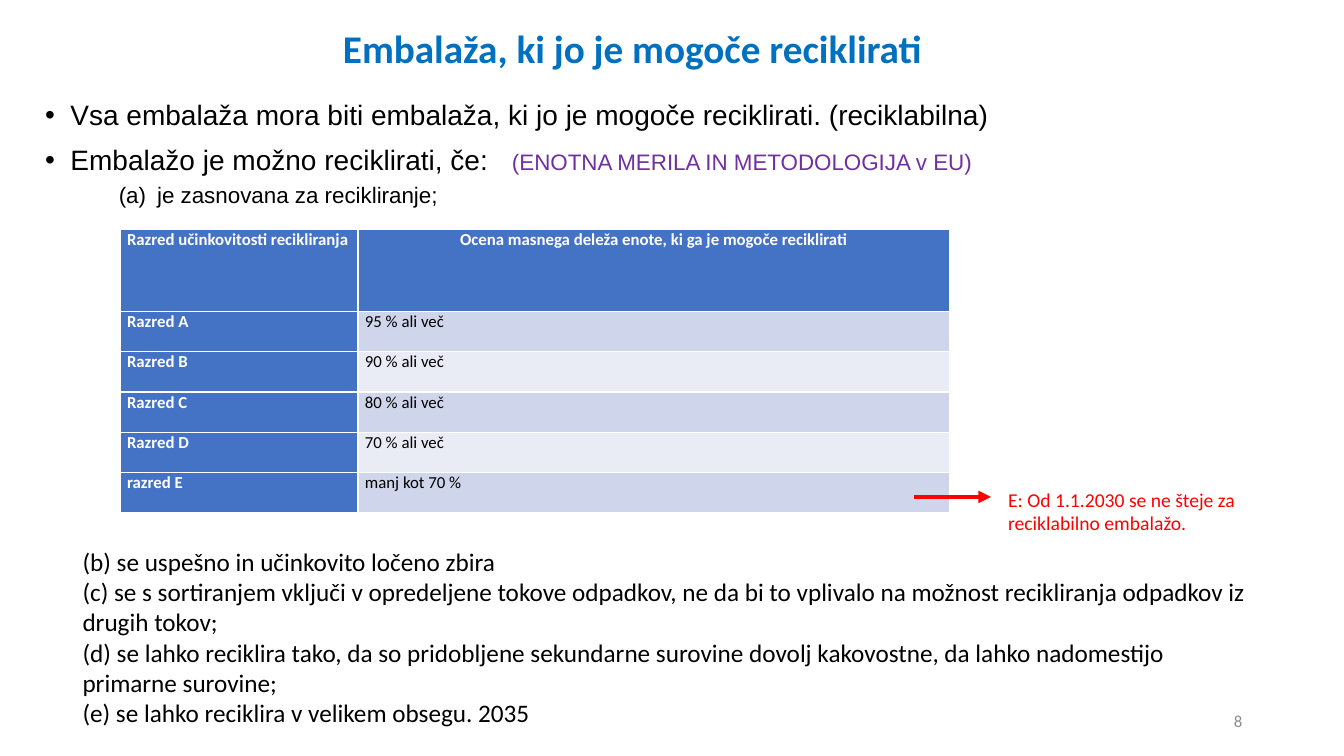
from dataclasses import dataclass

from lxml import etree
from pptx import Presentation
from pptx.dml.color import RGBColor
from pptx.enum.shapes import MSO_CONNECTOR
from pptx.enum.text import MSO_ANCHOR, PP_ALIGN
from pptx.oxml.ns import qn
from pptx.util import Inches, Pt

LEFT, CENTER, RIGHT, JUSTIFY = PP_ALIGN.LEFT, PP_ALIGN.CENTER, PP_ALIGN.RIGHT, PP_ALIGN.JUSTIFY
MIDDLE, TOP = MSO_ANCHOR.MIDDLE, MSO_ANCHOR.TOP
STRAIGHT = MSO_CONNECTOR.STRAIGHT


@dataclass(frozen=True)
class Theme:
    heading: str = "0070C0"
    text: str = "000000"
    accent: str = "7030A0"
    warning: str = "FF0000"
    muted: str = "8C8C8C"
    white: str = "FFFFFF"
    header: str = "4472C4"
    bands: tuple = ("CFD5EA", "E9EBF5")
    title_size: int = 28
    bullet_size: int = 20
    condition_size: int = 18
    detail_size: int = 16
    note_size: int = 14
    small_size: int = 12
    body_font: str = "Arial"
    main_font: str = "Calibri"


THEME = Theme()


def style_runs(para, size, color, font=THEME.main_font, bold=False):
    for span in para.runs:
        span.font.size = Pt(size)
        span.font.name = font
        span.font.bold = bold
        span.font.color.rgb = RGBColor.from_string(color)


def add_text(page, area, text, size, color, align=LEFT, anchor=TOP):
    """Add a wrapping text box, one paragraph for each line of text."""
    box = page.shapes.add_textbox(*map(Inches, area))
    frame = box.text_frame
    frame.word_wrap = True
    frame.vertical_anchor = anchor
    frame.text = text
    for para in frame.paragraphs:
        para.alignment = align
        style_runs(para, size, color)
    return frame


deck = Presentation()
deck.slide_width, deck.slide_height = Inches(13.33), Inches(7.5)
page = deck.slides.add_slide(deck.slide_layouts[5])

# Title
title = page.shapes.title
title.left, title.top, title.width, title.height = map(Inches, (0.52, 0.15, 11.5, 0.71))
title.text_frame.text = "Embalaža, ki jo je mogoče reciklirati"
title.text_frame.vertical_anchor = MIDDLE
heading = title.text_frame.paragraphs[0]
heading.alignment = CENTER
heading.line_spacing = 0.9
style_runs(heading, THEME.title_size, THEME.heading, bold=True)

# Requirements: text, size, left margin, hanging indent, space before, bullet tag and its attributes
requirements = [
    ("Vsa embalaža mora biti embalaža, ki jo je mogoče reciklirati. (reciklabilna)",
     THEME.bullet_size, 0.25, 0.25, 10, "a:buChar", {"char": "•"}),
    ("Embalažo je možno reciklirati, če:",
     THEME.bullet_size, 0.25, 0.25, 10, "a:buChar", {"char": "•"}),
    ("je zasnovana za recikliranje;",
     THEME.detail_size, 1.11, 0.38, 6, "a:buAutoNum", {"type": "alphaLcParenBoth"}),
]
frame = add_text(page, (0.35, 0.96, 12.83, 1.25), "\n".join(row[0] for row in requirements),
                 THEME.bullet_size, THEME.text)
for para, (_, size, margin, hanging, before, tag, attributes) in zip(frame.paragraphs, requirements):
    para.line_spacing = 0.9
    para.space_before = Pt(before)
    style_runs(para, size, THEME.text, THEME.body_font)
    properties = para._p.get_or_add_pPr()
    properties.set("marL", str(Inches(margin)))
    properties.set("indent", str(-Inches(hanging)))
    etree.SubElement(properties, qn("a:buFont"), typeface=THEME.body_font)
    etree.SubElement(properties, qn(tag), attributes)

# The remark follows its requirement at a tab stop
requirement = frame.paragraphs[1]
tabs = etree.SubElement(requirement._p.get_or_add_pPr(), qn("a:tabLst"))
etree.SubElement(tabs, qn("a:tab"), pos=str(Inches(4.63)), algn="l")
remark = requirement.add_run()
remark.text = "\t(ENOTNA MERILA IN METODOLOGIJA v EU)"
remark.font.size = Pt(THEME.detail_size)
remark.font.name = THEME.body_font
remark.font.color.rgb = RGBColor.from_string(THEME.accent)

# Recycling classes
classes = [
    ("Razred učinkovitosti recikliranja", "Ocena masnega deleža enote, ki ga je mogoče reciklirati"),
    ("Razred A", "95 % ali več"),
    ("Razred B", "90 % ali več"),
    ("Razred C", "80 % ali več"),
    ("Razred D", "70 % ali več"),
    ("razred E", "manj kot 70 %"),
]
table = page.shapes.add_table(len(classes), 2, *map(Inches, (1.19, 2.28, 8.22, 2.82))).table
table.first_col = True
for column, width in zip(table.columns, (2.36, 5.87)):
    column.width = Inches(width)
for row, texts in enumerate(classes):
    table.rows[row].height = Inches(0.4 if row else 0.81)
    for column, text in enumerate(texts):
        is_header = row == 0 or column == 0
        cell = table.cell(row, column)
        cell.margin_left = cell.margin_right = Inches(0.07)
        cell.margin_top = cell.margin_bottom = 0
        cell.fill.solid()
        fill = THEME.header if is_header else THEME.bands[(row - 1) % 2]
        cell.fill.fore_color.rgb = RGBColor.from_string(fill)
        cell.text_frame.text = text
        para = cell.text_frame.paragraphs[0]
        para.alignment = CENTER if row == 0 and column == 1 else JUSTIFY
        para.space_before = para.space_after = Pt(6)
        style_runs(para, THEME.small_size, THEME.white if is_header else THEME.text, bold=is_header)

# Note on class E
add_text(page, (9.9, 4.79, 3.09, 0.57), "E: Od 1.1.2030 se ne šteje za reciklabilno embalažo.",
         THEME.note_size, THEME.warning)
arrow = page.shapes.add_connector(STRAIGHT, Inches(9.07), Inches(4.93), Inches(9.83), Inches(4.93))
arrow.line.color.rgb = RGBColor.from_string(THEME.warning)
arrow.line.width = Pt(3)
etree.SubElement(arrow.line._get_or_add_ln(), qn("a:tailEnd"), type="triangle")
etree.SubElement(arrow._element.spPr, qn("a:effectLst"))

# Further conditions and page number
conditions = [
    "(b) se uspešno in učinkovito ločeno zbira",
    "(c) se s sortiranjem vključi v opredeljene tokove odpadkov, ne da bi to vplivalo na možnost "
    "recikliranja odpadkov iz drugih tokov;",
    "(d) se lahko reciklira tako, da so pridobljene sekundarne surovine dovolj kakovostne, da lahko "
    "nadomestijo primarne surovine;",
    "(e) se lahko reciklira v velikem obsegu. 2035",
]
add_text(page, (0.72, 5.37, 11.89, 1.92), "\n".join(conditions), THEME.condition_size, THEME.text)
add_text(page, (9.42, 6.95, 3, 0.4), "8", THEME.small_size, THEME.muted, RIGHT, MIDDLE)

deck.save("out.pptx")
